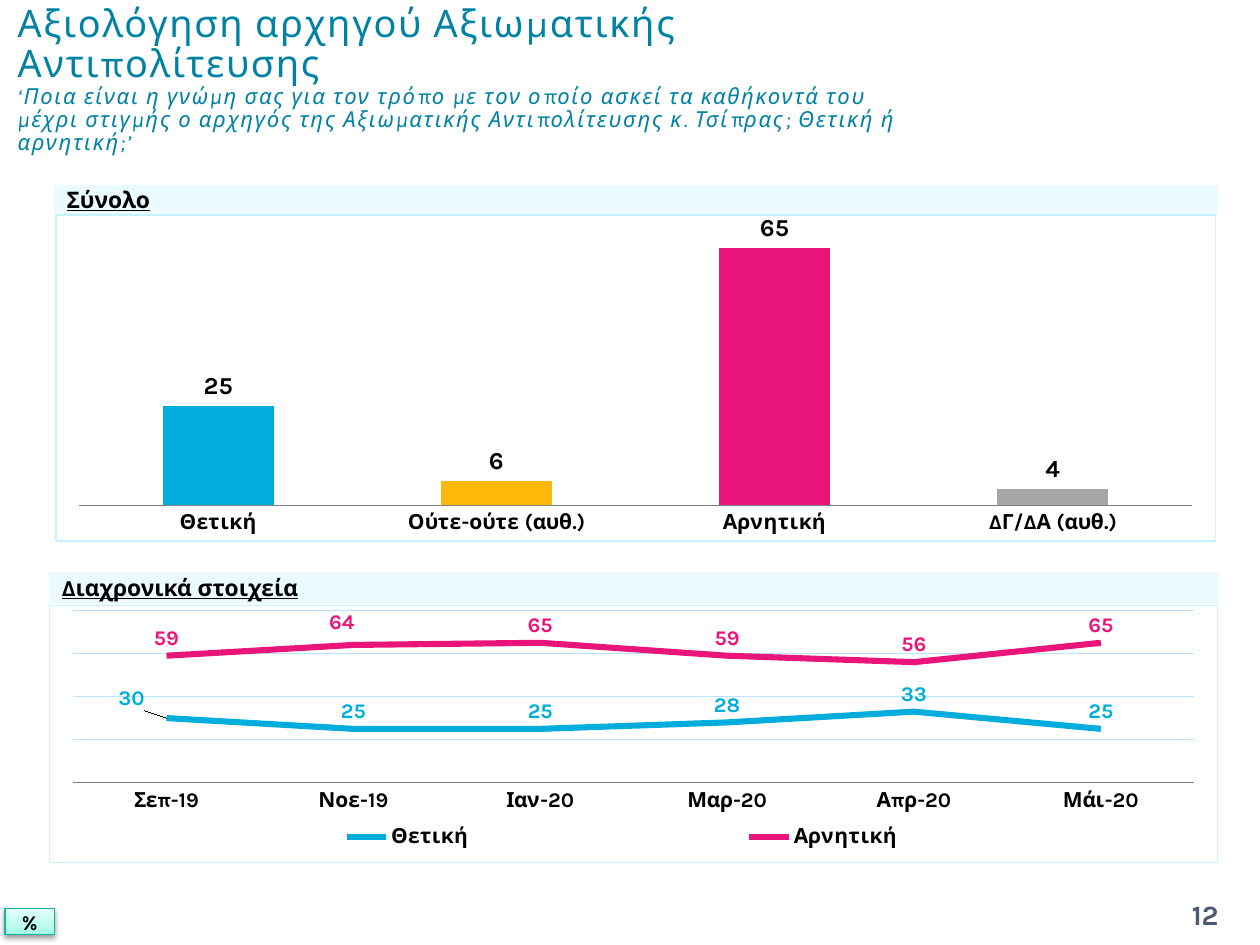
import pptx
import pptx.chart.data
import pptx.dml.color
import pptx.enum.chart
import pptx.enum.shapes
import pptx.enum.text
import pptx.oxml
import pptx.oxml.ns
import pptx.util
from dataclasses import dataclass, field

Inches, Pt = pptx.util.Inches, pptx.util.Pt
RGB = pptx.dml.color.RGBColor.from_string
Align = pptx.enum.text.PP_ALIGN
ChartType = pptx.enum.chart.XL_CHART_TYPE
qn = pptx.oxml.ns.qn


@dataclass(frozen=True)
class Theme:
    font: str = "Karla"
    ink: str = "000000"
    title: str = "0082A5"
    page_number: str = "4E5B6F"
    pale: str = "C5F3FF"
    grid: str = "B9E2FD"
    axis: str = "808080"
    positive: str = "00ADDC"
    neither: str = "FEB80A"
    negative: str = "EA157A"
    unknown: str = "A6A6A6"
    badge_line: str = "16B39E"
    title_size: float = 21.6
    question_size: float = 12.6
    heading_size: float = 13
    label_size: float = 12
    value_size: float = 14
    number_size: float = 16


THEME = Theme()


@dataclass(frozen=True)
class Box:
    left: float
    top: float
    width: float
    height: float

    def lengths(self) -> list:
        return [Inches(v) for v in (self.left, self.top, self.width, self.height)]


@dataclass(frozen=True)
class Series:
    name: str
    values: tuple
    color: str
    label_offsets: dict = field(default_factory=dict)


def xml(source: str):
    declarations = pptx.oxml.ns.nsdecls("a", "c")
    return pptx.oxml.parse_xml(source.replace(">", f" {declarations}>", 1))


def style_font(font, size, color=THEME.ink, bold=False, italic=False, underline=False):
    font.name, font.size, font.bold = THEME.font, Pt(size), bold
    font.italic, font.underline = italic, underline
    font.color.rgb = RGB(color)


def write(para, text: str, *, spacing: float = 0, **style):
    span = para.add_run()
    span.text = text
    style_font(span.font, **style)
    if spacing:
        span.font._element.set("spc", str(int(spacing * 100)))


def prepare_frame(shape, align=Align.LEFT):
    """Centre the text vertically and return the first paragraph."""
    frame = shape.text_frame
    frame.word_wrap = True
    frame.auto_size = pptx.enum.text.MSO_AUTO_SIZE.NONE
    frame.vertical_anchor = pptx.enum.text.MSO_ANCHOR.MIDDLE
    frame.margin_top = frame.margin_bottom = 0
    para = frame.paragraphs[0]
    para.alignment = align
    return para


def add_rectangle(page, box: Box):
    shape = page.shapes.add_shape(pptx.enum.shapes.MSO_SHAPE.RECTANGLE, *box.lengths())
    shape.shadow.inherit = False
    return shape


def add_heading(page, box: Box, text: str, tab_stop: float = 0):
    """A tinted bar; tab_stop is where an underlined tab ends."""
    bar = add_rectangle(page, box)
    bar.fill.solid()
    bar.fill.fore_color.rgb = RGB(THEME.pale)
    bar.fill._xPr.find(".//" + qn("a:srgbClr")).append(xml('<a:alpha val="35000"></a:alpha>'))
    bar.line.fill.background()
    para = prepare_frame(bar)
    if tab_stop:
        para._p.get_or_add_pPr().append(
            xml(f'<a:tabLst><a:tab pos="{Inches(tab_stop)}" algn="l"/></a:tabLst>'))
    write(para, text, size=THEME.heading_size, bold=True, underline=True)


def set_layout(parent, index: int, inner: str = "", edge: bool = True, **values):
    """Give a chart part a manual layout, as fractions of the chart."""
    for old in parent.findall(qn("c:layout")):
        parent.remove(old)
    modes = '<c:xMode val="edge"/><c:yMode val="edge"/>' if edge else ""
    sizes = "".join(f'<c:{key} val="{value}"/>' for key, value in values.items())
    parent.insert(index, xml(
        f"<c:layout><c:manualLayout>{inner}{modes}{sizes}</c:manualLayout></c:layout>"))


def add_chart(page, kind, box: Box, categories: list, series: list, top: float,
              plot: dict):
    data = pptx.chart.data.CategoryChartData(number_format="0")
    data.categories = categories
    for item in series:
        data.add_series(item.name, item.values)
    chart = page.shapes.add_chart(kind, *box.lengths(), data).chart
    chart.has_title = chart.has_legend = False
    style_font(chart.font, 18)
    chart._chartSpace.find(qn("c:chart")).addnext(xml(
        f'<c:spPr><a:noFill/><a:ln w="9525"><a:solidFill><a:srgbClr val="{THEME.pale}"/>'
        "</a:solidFill></a:ln></c:spPr>"))
    plot_area = chart._chartSpace.find(".//" + qn("c:plotArea"))
    set_layout(plot_area, 0, '<c:layoutTarget val="inner"/>', **plot)
    axis = chart.category_axis
    axis.major_tick_mark = axis.minor_tick_mark = pptx.enum.chart.XL_TICK_MARK.NONE
    axis.format.line.color.rgb = RGB(THEME.axis)
    style_font(axis.tick_labels.font, THEME.label_size, bold=True)
    values = chart.value_axis
    values.visible = values.has_major_gridlines = False
    values.minimum_scale, values.maximum_scale = 0, top
    return chart


def show_values(labels, size: float, color: str, position):
    labels.show_value = True
    labels.number_format, labels.number_format_is_linked = "0", False
    labels.position = position
    style_font(labels.font, size, color, bold=True)


def add_totals(page, box: Box):
    answers = ["Θετική", "Ούτε-ούτε (αυθ.)", "Αρνητική", "ΔΓ/ΔΑ (αυθ.)"]
    colors = [THEME.positive, THEME.neither, THEME.negative, THEME.unknown]
    totals = Series("Series 1", (25, 6, 65, 4), THEME.positive)
    chart = add_chart(page, ChartType.COLUMN_CLUSTERED, box, answers, [totals], 70,
                      dict(x=0.02, y=0.04, w=0.96, h=0.85))
    plot = chart.plots[0]
    plot.gap_width, plot.overlap, plot.vary_by_categories = 150, -25, False
    bars = plot.series[0]
    for target, color in [(bars, totals.color)] + [
            (bars.points[i], color) for i, color in enumerate(colors) if i]:
        target.format.fill.solid()
        target.format.fill.fore_color.rgb = RGB(color)
    show_values(bars.data_labels, THEME.value_size, THEME.ink,
                pptx.enum.chart.XL_LABEL_POSITION.OUTSIDE_END)


def add_trend(page, box: Box):
    months = ["Σεπ-19", "Νοε-19", "Ιαν-20", "Μαρ-20", "Απρ-20", "Μάι-20"]
    trend = [
        Series("Θετική", (30, 25, 25, 28, 33, 25), THEME.positive, {0: (-0.03, -0.01)}),
        Series("Αρνητική", (59, 64, 65, 59, 56, 65), THEME.negative, {1: (-0.01, -0.02)}),
    ]
    chart = add_chart(page, ChartType.LINE, box, months, trend, 80,
                      dict(x=0.02, y=0.02, w=0.96, h=0.67))
    values = chart.value_axis
    values.major_unit, values.has_major_gridlines = 20, True
    values.major_gridlines.format.line.color.rgb = RGB(THEME.grid)
    values.major_gridlines.format.line.width = Pt(0.75)
    above = pptx.enum.chart.XL_LABEL_POSITION.ABOVE
    for line, item in zip(chart.plots[0].series, trend):
        line.smooth = False
        line.marker.style = pptx.enum.chart.XL_MARKER_STYLE.NONE
        line.format.line.color.rgb = RGB(item.color)
        line.format.line.width = Pt(3.5)
        show_values(line.data_labels, THEME.label_size, item.color, above)
        for index, (x, y) in item.label_offsets.items():
            label = line.points[index].data_label
            label.position = above
            style_font(label.font, THEME.label_size, item.color, bold=True)
            set_layout(line.data_labels._element.find(qn("c:dLbl")), 1, edge=False, x=x, y=y)
    chart.has_legend = True
    legend = chart.legend
    legend.position = pptx.enum.chart.XL_LEGEND_POSITION.BOTTOM
    legend.include_in_layout = False
    style_font(legend.font, THEME.label_size, bold=True)
    set_layout(legend._element, 1, x=0.02, y=0.82, w=0.94, h=0.16)


def add_badge(page, box: Box):
    badge = add_rectangle(page, box)
    badge.line.color.rgb, badge.line.width = RGB(THEME.badge_line), Pt(0.75)
    stops = "".join(f'<a:gs pos="{place}000"><a:srgbClr val="{color}"/></a:gs>' for place, color
                    in [(0, "9DFDE8"), (35, "BBFCED"), (100, "E4FFF9")])
    properties = badge._element.spPr
    properties.find(qn("a:prstGeom")).addnext(xml(
        f'<a:gradFill><a:gsLst>{stops}</a:gsLst><a:lin ang="16200000" scaled="0"/></a:gradFill>'))
    properties.find(qn("a:effectLst")).append(xml(
        '<a:outerShdw blurRad="40000" dist="20000" dir="5400000" rotWithShape="0">'
        '<a:srgbClr val="000000"><a:alpha val="38000"/></a:srgbClr></a:outerShdw>'))
    write(prepare_frame(badge, Align.CENTER), "%", size=THEME.label_size, bold=True)


def add_title(page, box: Box):
    title = page.shapes.title
    title.left, title.top, title.width, title.height = box.lengths()
    para = prepare_frame(title)
    para.line_spacing = 0.88
    write(para, "Αξιολόγηση αρχηγού Αξιωματικής Αντιπολίτευσης", spacing=1,
          size=THEME.title_size, color=THEME.title)
    para.add_line_break()
    write(para, "‘Ποια είναι η γνώμη σας για τον τρόπο με τον οποίο ασκεί τα καθήκοντά του "
          "μέχρι στιγμής ο αρχηγός της Αξιωματικής Αντιπολίτευσης κ. Τσίπρας; Θετική ή "
          "αρνητική;’", spacing=1, size=THEME.question_size, color=THEME.title, italic=True)


def main():
    deck = pptx.Presentation()
    deck.slide_width, deck.slide_height = Inches(10), Inches(7.5)
    page = deck.slides.add_slide(deck.slide_layouts[5])
    add_title(page, Box(0.04, 0.05, 7.17, 1.18))
    add_heading(page, Box(0.43, 1.47, 9.24, 0.23), "Σύνολο\t", tab_stop=1.14)
    add_totals(page, Box(0.44, 1.7, 9.21, 2.6))
    add_badge(page, Box(0.04, 7.21, 0.39, 0.21))
    number = page.shapes.add_textbox(*Box(9.17, 7.06, 0.79, 0.4).lengths())
    write(prepare_frame(number, Align.CENTER), "12", size=THEME.number_size,
          color=THEME.page_number, bold=True)
    add_heading(page, Box(0.39, 4.54, 9.28, 0.25), "Διαχρονικά στοιχεία")
    add_trend(page, Box(0.39, 4.8, 9.28, 2.05))
    deck.save("out.pptx")


if __name__ == "__main__":
    main()
